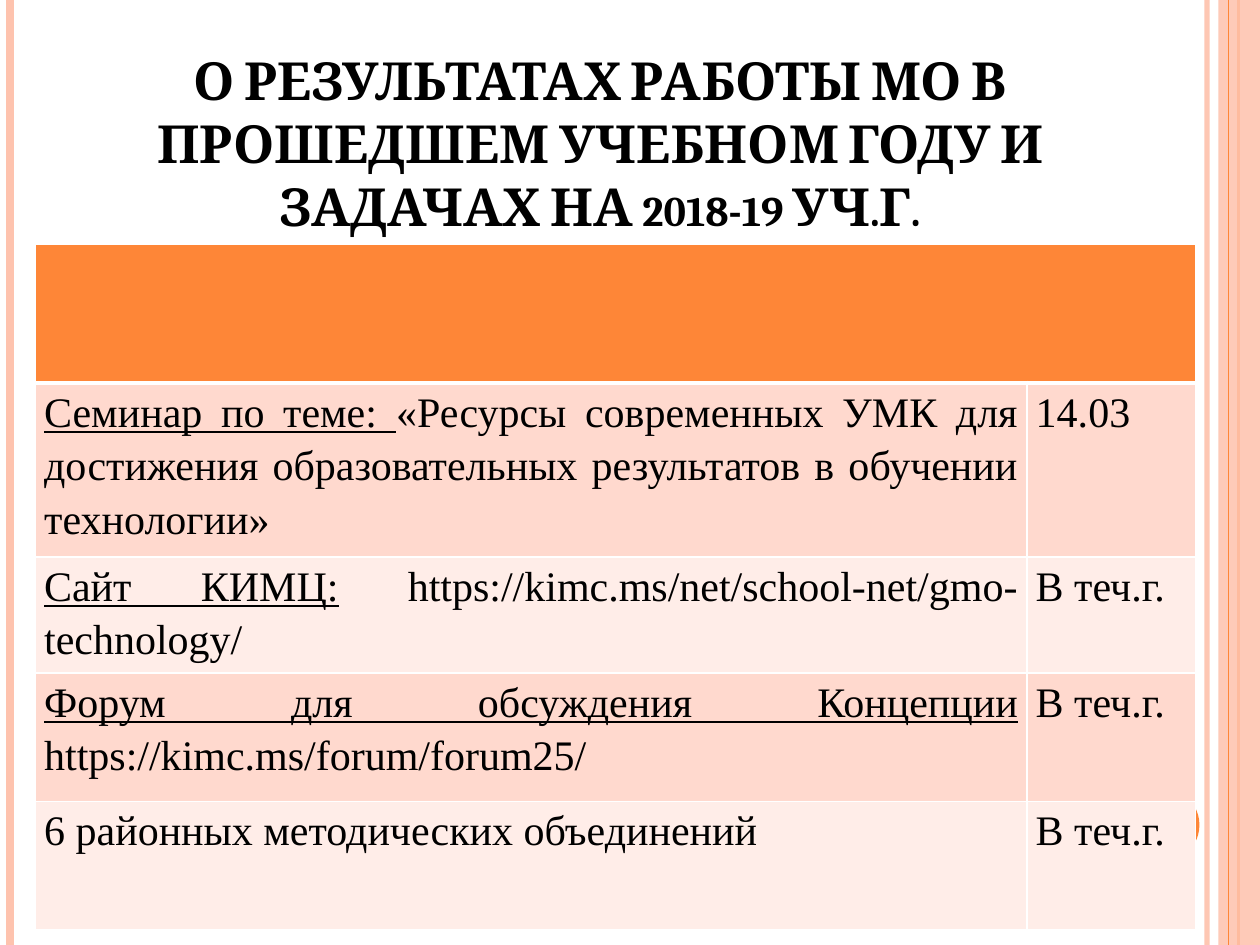
from lxml.etree import SubElement
from pptx import Presentation
from pptx.dml.color import RGBColor
from pptx.enum.shapes import MSO_CONNECTOR as CONN, MSO_SHAPE as SHAPE
from pptx.enum.text import MSO_ANCHOR as ANCHOR, PP_ALIGN as ALIGN
from pptx.oxml.ns import qn
from pptx.util import Cm, Pt

COLORS = {
    "orange": "FE8637",
    "peach": "FEC3AE",
    "band_dark": "FFD9CE",
    "band_light": "FFEDE8",
    "text": "000000",
    "border": "FFFFFF",
}
WIDTH, HEIGHT = 25.4, 19.05
TITLE = "О РЕЗУЛЬТАТАХ РАБОТЫ МО В ПРОШЕДШЕМ УЧЕБНОМ ГОДУ И ЗАДАЧАХ НА 2018-19 УЧ.Г."
EVENTS = [
    ("Семинар по теме: ", "«Ресурсы современных УМК для достижения образовательных "
     "результатов в обучении технологии»", "14.03"),
    ("Сайт КИМЦ:", " https://kimc.ms/net/school-net/gmo-technology/", "В теч.г."),
    ("Форум для обсуждения Концепции", " https://kimc.ms/forum/forum25/", "В теч.г."),
    ("", "6 районных методических объединений", "В теч.г."),
]
COL_WIDTHS = [19.99, 3.4]
ROW_HEIGHTS = [2.79, 2.18, 2.34, 2.59, 2.59]
TITLE_FONT = {"name": "Cambria", "size": Pt(30), "bold": True}
CELL_FONT = {"name": "Times New Roman", "size": Pt(24)}
CELL_MARGINS = {"margin_left": Cm(0.18), "margin_right": Cm(0.18),
                "margin_top": 0, "margin_bottom": 0}


def rgb(key):
    return RGBColor.from_string(COLORS[key])


def set_attrs(target, values):
    for name, value in values.items():
        setattr(target, name, value)


def set_alpha(color_parent, percent):
    clr = next(color_parent.iter(qn("a:srgbClr")))
    SubElement(clr, qn("a:alpha"), val=str(percent * 1000))


def add_run(p, text, font, **extra):
    r = p.add_run()
    r.text = text
    set_attrs(r.font, {**font, **extra})
    r.font.color.rgb = rgb("text")
    return r


def add_rule(s, x, top, height, color, width):
    line = s.shapes.add_connector(CONN.STRAIGHT, Cm(x), Cm(top), Cm(x), Cm(top + height))
    line.line.color.rgb = rgb(color)
    line.line.width = Pt(width)
    SubElement(line._element.spPr, qn("a:effectLst"))
    return line


def add_plain_shape(s, kind, x, y, w, h, color):
    sp = s.shapes.add_shape(kind, Cm(x), Cm(y), Cm(w), Cm(h))
    sp.shadow.inherit = False
    sp.fill.solid()
    sp.fill.fore_color.rgb = rgb(color)
    sp.line.fill.background()
    return sp


def add_frame(s, x, y, w, h):
    right = x + w
    soft = add_rule(s, right - 1.07, y, h, "peach", 3)
    set_alpha(soft._element.spPr, 93)
    add_rule(s, x + 0.21, y, h, "peach", 4.5)
    add_rule(s, right - 0.43, y, h, "orange", 1.5)
    strip = add_plain_shape(s, SHAPE.RECTANGLE, right - 0.84, y, 0.84, h, "peach")
    set_alpha(strip._element.spPr, 87)
    add_rule(s, right - 0.64, y, h, "orange", 0.75)
    add_plain_shape(s, SHAPE.OVAL, right - 2.74, y + h - 3.18, 1.52, 1.52, "orange")


def add_title(s, x, y, w, h):
    tf = s.shapes.add_textbox(Cm(x), Cm(y), Cm(w), Cm(h)).text_frame
    set_attrs(tf, {"word_wrap": True, "vertical_anchor": ANCHOR.BOTTOM})
    p = tf.paragraphs[0]
    p.alignment = ALIGN.CENTER
    r = add_run(p, TITLE, TITLE_FONT)
    r.font._element.set("cap", "small")


def style_cell(cell, fill, top=1, bottom=1):
    tc_pr = cell._tc.get_or_add_tcPr()
    for side, width in {"L": 1, "R": 1, "T": top, "B": bottom}.items():
        ln = SubElement(tc_pr, qn(f"a:ln{side}"), w=str(Pt(width)))
        solid = SubElement(ln, qn("a:solidFill"))
        SubElement(solid, qn("a:srgbClr"), val=COLORS["border"])
    cell.fill.solid()
    cell.fill.fore_color.rgb = rgb(fill)


def fill_cell(cell, lead, text):
    set_attrs(cell, CELL_MARGINS)
    p = cell.text_frame.paragraphs[0]
    set_attrs(p, {"alignment": ALIGN.JUSTIFY, "line_spacing": 1.15})
    if lead:
        add_run(p, lead, CELL_FONT, underline=True)
    add_run(p, text, CELL_FONT)


def add_events_table(s, x, y, w, h):
    table = s.shapes.add_table(len(ROW_HEIGHTS), len(COL_WIDTHS),
                               Cm(x), Cm(y), Cm(w), Cm(h)).table
    for col, width in zip(table.columns, COL_WIDTHS):
        col.width = Cm(width)
    for row, height in zip(table.rows, ROW_HEIGHTS):
        row.height = Cm(height)
    for cell in table.rows[0].cells:
        style_cell(cell, "orange", bottom=3)
    table.cell(0, 0).merge(table.cell(0, 1))
    for i, (lead, text, date) in enumerate(EVENTS, start=1):
        band = "band_dark" if i % 2 else "band_light"
        for j, parts in enumerate([(lead, text), ("", date)]):
            cell = table.cell(i, j)
            style_cell(cell, band, top=3 if i == 1 else 1)
            fill_cell(cell, *parts)


def main():
    prs = Presentation()
    set_attrs(prs, {"slide_width": Cm(WIDTH), "slide_height": Cm(HEIGHT)})
    s = prs.slides.add_slide(prs.slide_layouts[6])
    add_frame(s, 0, 0, WIDTH, HEIGHT)
    add_title(s, 1.09, 0.53, 22.02, 4.37)
    add_events_table(s, 0.71, 4.93, sum(COL_WIDTHS), sum(ROW_HEIGHTS))
    prs.save("out.pptx")


if __name__ == "__main__":
    main()
